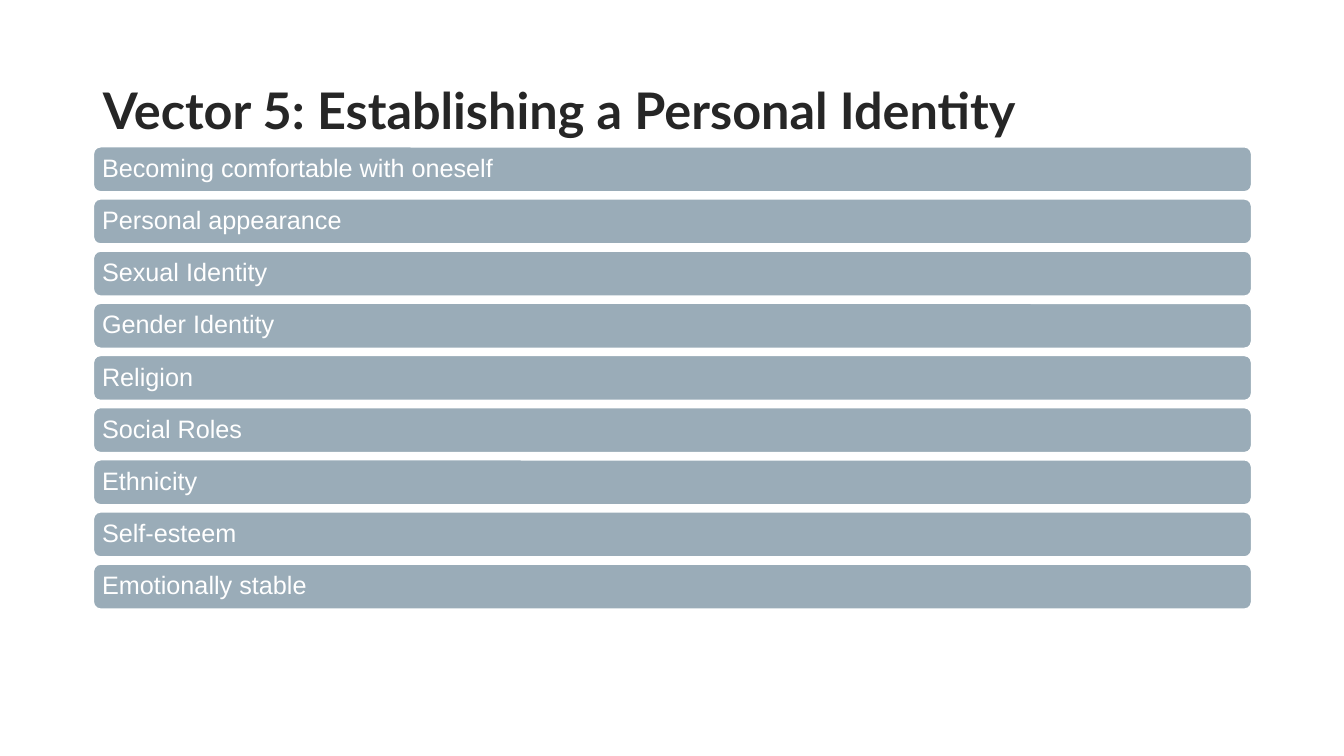
from pptx import Presentation
from pptx.dml.color import RGBColor
from pptx.enum.shapes import MSO_SHAPE
from pptx.enum.text import MSO_ANCHOR, MSO_AUTO_SIZE, PP_ALIGN
from pptx.util import Inches, Pt


def paint(code):
    """Turn a hex string into a colour."""
    return RGBColor.from_string(code)


def style(frame, font, size, color, bold=False):
    """Format a frame that holds one left-aligned line."""
    frame.word_wrap = True
    frame.auto_size = MSO_AUTO_SIZE.NONE
    frame.vertical_anchor = MSO_ANCHOR.MIDDLE
    line = frame.paragraphs[0]
    line.alignment = PP_ALIGN.LEFT
    line.line_spacing = 0.9
    line.font.name = font
    line.font.size = Pt(size)
    line.font.bold = bold
    line.font.color.rgb = paint(color)


TOPICS = [
    "Becoming comfortable with oneself",
    "Personal appearance",
    "Sexual Identity",
    "Gender Identity",
    "Religion",
    "Social Roles",
    "Ethnicity",
    "Self-esteem",
    "Emotionally stable",
]

deck = Presentation()
deck.slide_width = Inches(13.33)
deck.slide_height = Inches(7.5)
slide = deck.slides.add_slide(deck.slide_layouts[5])

left, width = Inches(0.92), Inches(11.5)
first, last = Inches(1.45), Inches(5.59)
step = (last - first) / (len(TOPICS) - 1)

title = slide.shapes.title
title.left, title.top = left, Inches(0.4)
title.width, title.height = width, Inches(1.45)
title.text_frame.text = "Vector 5: Establishing a Personal Identity"
style(title.text_frame, "Lato", 36, "262626", bold=True)

for row, topic in enumerate(TOPICS):
    top = round(first + row * step)
    bar = slide.shapes.add_shape(
        MSO_SHAPE.ROUNDED_RECTANGLE, left, top, width, Inches(0.46))
    bar.shadow.inherit = False
    bar.fill.solid()
    bar.fill.fore_color.rgb = paint("9AACB8")
    bar.line.color.rgb = paint("FFFFFF")
    bar.line.width = Pt(2)
    frame = bar.text_frame
    frame.margin_left = frame.margin_right = Inches(0.07)
    frame.margin_top = frame.margin_bottom = Inches(0.07)
    frame.text = topic
    style(frame, "Arial", 18, "FFFFFF")

deck.save("out.pptx")
